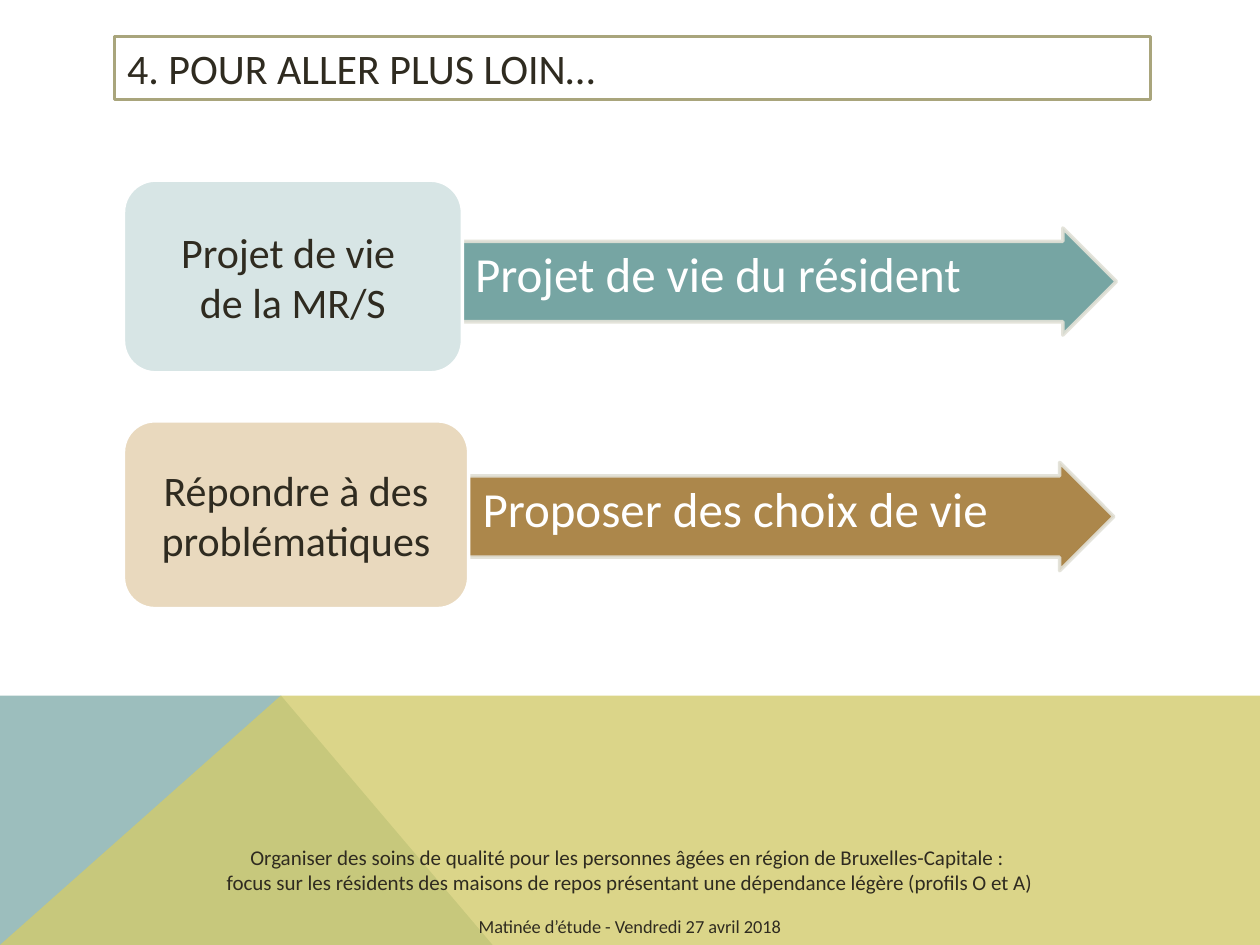
from dataclasses import dataclass

from lxml import etree
from pptx import Presentation
from pptx.dml.color import RGBColor
from pptx.enum import shapes, text
from pptx.oxml import ns
from pptx.util import Inches, Pt


@dataclass(frozen=True)
class Theme:
    """Colours, font and type sizes of the slide."""
    font: str = "Calibri"
    ink: str = "2F2B20"
    white: str = "FFFFFF"
    title_line: str = "A9A57C"
    arrow_line: str = "E2E1D7"
    blue: str = "9CBEBD"
    yellow: str = "D2CB6C"
    teal: str = "689C9A"
    pale_teal: str = "D7E5E5"
    brown: str = "A47B38"
    pale_brown: str = "E9D9BE"
    heading_size: float = 24
    arrow_size: float = 28
    footer_size: float = 12
    date_size: float = 10.5


THEME = Theme()


def paint(fill, colour, opacity=100):
    """Make a fill solid, with opacity in percent."""
    fill.solid()
    fill.fore_color.rgb = RGBColor.from_string(colour)
    if opacity < 100:
        node = fill._xPr.find(".//" + ns.qn("a:srgbClr"))
        etree.SubElement(node, ns.qn("a:alpha"), val=str(opacity * 1000))


def write(box, lines, size, colour, align=text.PP_ALIGN.LEFT, anchor=text.MSO_ANCHOR.MIDDLE):
    """Write each line as a paragraph and return the paragraphs."""
    frame = box.text_frame
    frame.word_wrap = True
    frame.vertical_anchor = anchor
    paras = [frame.paragraphs[0]] + [frame.add_paragraph() for _ in lines[1:]]
    for para, line in zip(paras, lines):
        para.alignment = align
        span = para.add_run()
        span.text = line
        span.font.name = THEME.font
        span.font.size = Pt(size)
        span.font.color.rgb = RGBColor.from_string(colour)
    return paras


def add_panel(page, kind, bounds, fill, line, opacity=100):
    """Add a filled preset shape with a two-point outline."""
    box = page.shapes.add_shape(kind, *map(Inches, bounds))
    box.shadow.inherit = False
    paint(box.fill, fill, opacity)
    paint(box.line.fill, line, opacity)
    box.line.width = Pt(2)
    return box


def add_band(page, points, colour, opacity=100):
    """Add a closed background outline."""
    corners = [(Inches(x), Inches(y)) for x, y in points]
    builder = page.shapes.build_freeform(*corners[0], scale=1.0)
    builder.add_line_segments(corners[1:], close=True)
    band = builder.convert_to_shape()
    band.shadow.inherit = False
    paint(band.fill, colour, opacity)
    band.line.fill.background()


def add_title(page, title):
    """Add the outlined title bar."""
    box = add_panel(page, shapes.MSO_SHAPE.RECTANGLE, (0.91, 0.29, 8.22, 0.5),
                    THEME.white, THEME.title_line)
    write(box, [title], THEME.heading_size, THEME.ink)


def add_arrow(page, bounds, label, colour):
    """Add a labelled arrow pointing right."""
    arrow = add_panel(page, shapes.MSO_SHAPE.RIGHT_ARROW, bounds, colour, THEME.arrow_line, 90)
    arrow.adjustments[0] = 0.75
    frame = arrow.text_frame
    frame.margin_left = Inches(0.33)
    frame.margin_top = frame.margin_right = frame.margin_bottom = Inches(0.02)
    write(arrow, [label], THEME.arrow_size, THEME.white, anchor=text.MSO_ANCHOR.TOP)


def add_card(page, bounds, lines, colour):
    """Add a rounded card with centred text."""
    card = add_panel(page, shapes.MSO_SHAPE.ROUNDED_RECTANGLE, bounds, colour, THEME.white)
    write(card, lines, THEME.heading_size, THEME.ink, text.PP_ALIGN.CENTER)


def add_footer(page, lines, date):
    """Add the event name with its date below."""
    box = page.shapes.add_textbox(Inches(0), Inches(6.65), Inches(10), Inches(0.85))
    paras = write(box, lines + [date], THEME.footer_size, THEME.ink,
                  text.PP_ALIGN.CENTER, text.MSO_ANCHOR.TOP)
    paras[-1].space_before = Pt(12)
    paras[-1].runs[0].font.size = Pt(THEME.date_size)


def main():
    """Build and save the slide."""
    deck = Presentation()
    deck.slide_width, deck.slide_height = Inches(10), Inches(7.5)
    page = deck.slides.add_slide(deck.slide_layouts[6])

    add_band(page, [(0, 7.5), (0, 5.52), (2.23, 5.52), (3.91, 7.5)], THEME.blue)
    add_band(page, [(0, 7.5), (2.23, 5.52), (10, 5.52), (10, 7.5)], THEME.yellow, 80)
    add_title(page, "4. POUR ALLER PLUS LOIN…")
    add_footer(page, [
        "Organiser des soins de qualité pour les personnes âgées en région de Bruxelles-Capitale : ",
        "focus sur les résidents des maisons de repos présentant une dépendance légère (profils O et A)",
    ], "Matinée d’étude - Vendredi 27 avril 2018")

    add_arrow(page, (3.44, 1.81, 5.42, 0.85), "Projet de vie du résident", THEME.teal)
    add_card(page, (0.98, 1.43, 2.69, 1.53), ["Projet de vie ", "de la MR/S"], THEME.pale_teal)
    add_arrow(page, (3.5, 3.67, 5.34, 0.86), "Proposer des choix de vie", THEME.brown)
    add_card(page, (0.98, 3.34, 2.74, 1.49), ["Répondre à des problématiques"], THEME.pale_brown)

    deck.save("out.pptx")


if __name__ == "__main__":
    main()
